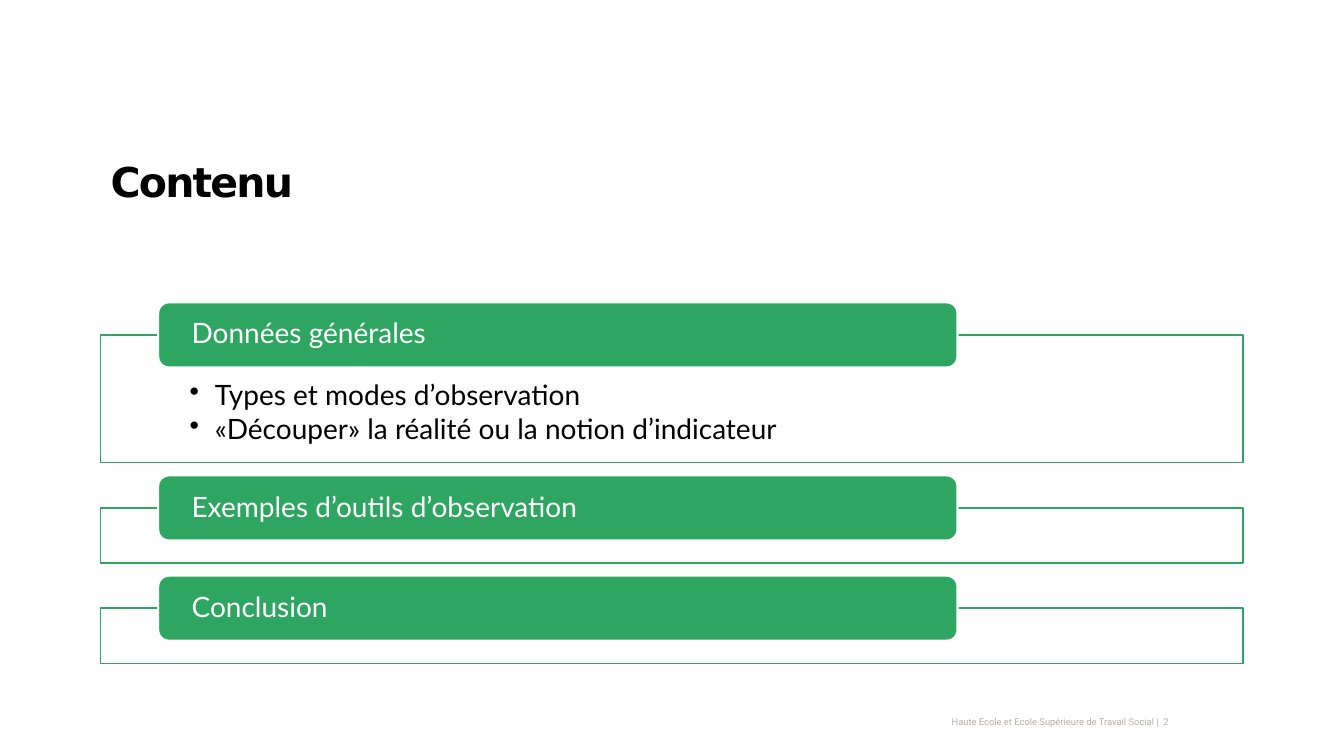
from lxml import etree
from pptx import Presentation
from pptx.dml.color import RGBColor
from pptx.enum.shapes import MSO_SHAPE
from pptx.enum.text import MSO_ANCHOR, PP_ALIGN
from pptx.oxml.ns import qn
from pptx.util import Pt

RECT, ROUND = MSO_SHAPE.RECTANGLE, MSO_SHAPE.ROUNDED_RECTANGLE
TOP, MIDDLE = MSO_ANCHOR.TOP, MSO_ANCHOR.MIDDLE
LEFT, RIGHT = PP_ALIGN.LEFT, PP_ALIGN.RIGHT

COLORS = {"green": "2EA662", "white": "FFFFFF", "black": "000000", "grey": "B5AEA7"}

# Text formats
TITLE = {"name": "DejaVu Sans", "size": Pt(29.3), "bold": True}
LABEL = {"name": "Lato", "size": Pt(20), "bold": False}
FOOT = {"name": "Roboto", "size": Pt(6.7), "bold": False}

# Section layout
SECTIONS = [
    ("Données générales", 91.4, ["Types et modes d’observation",
                                 "«Découper» la réalité ou la notion d’indicateur"]),
    ("Exemples d’outils d’observation", 39.4, []),
    ("Conclusion", 39.4, []),
]
START, LEAD, GAP = 216, 23.2, 9


def color(name):
    return RGBColor.from_string(COLORS[name])


def set_frame(shape, anchor, insets):
    frame = shape.text_frame
    left, top, right, bottom = map(Pt, insets)
    values = {"word_wrap": True, "vertical_anchor": anchor, "margin_left": left,
              "margin_top": top, "margin_right": right, "margin_bottom": bottom}
    for key, value in values.items():
        setattr(frame, key, value)
    return frame


def add_bullet(para):
    props = para._p.get_or_add_pPr()
    props.set("marL", str(Pt(18)))
    props.set("indent", str(-Pt(18)))
    etree.SubElement(props, qn("a:buChar")).set("char", "•")


def write(frame, lines, style, tint, align=LEFT, spacing=1.0, after=0, bullet=False):
    for i, line in enumerate(lines):
        para = frame.paragraphs[0] if i == 0 else frame.add_paragraph()
        para.alignment, para.line_spacing, para.space_after = align, spacing, Pt(after)
        if bullet:
            add_bullet(para)
        run = para.add_run()
        run.text = line
        for key, value in style.items():
            setattr(run.font, key, value)
        run.font.color.rgb = color(tint)


def add_text(slide, area, insets, anchor, line, style, tint, **layout):
    box = slide.shapes.add_textbox(*map(Pt, area))
    write(set_frame(box, anchor, insets), [line], style, tint, **layout)
    return box


def add_block(slide, kind, area, fill, line, width):
    shape = slide.shapes.add_shape(kind, *map(Pt, area))
    shape.shadow.inherit = False
    shape.fill.solid()
    shape.fill.fore_color.rgb = color(fill)
    shape.line.color.rgb = color(line)
    shape.line.width = Pt(width)
    return shape


def add_section(slide, top, height, head, items):
    # Outlined frame with its list
    body = add_block(slide, RECT, (72, top + LEAD, 816, height), "white", "green", 1)
    tone = body.fill._xPr.find(qn("a:solidFill"))[0]
    etree.SubElement(tone, qn("a:alpha")).set("val", "90000")
    if items:
        frame = set_frame(body, TOP, (63.4, 33, 63.4, 11.5))
        write(frame, items, LABEL, "black", spacing=0.9, after=3, bullet=True)
    # Heading bar across the frame's top edge
    bar = add_block(slide, ROUND, (113, top, 571, 46.5), "green", "white", 1.5)
    frame = set_frame(bar, MIDDLE, (21.6, 0, 21.6, 0))
    write(frame, [head], LABEL, "white", spacing=0.9)


def main():
    deck = Presentation()
    deck.slide_width, deck.slide_height = Pt(960), Pt(540)
    slide = deck.slides.add_slide(deck.slide_layouts[6])

    # Footer
    add_text(slide, (607.7, 511.2, 236.9, 10), (9.4, 5, 9.4, 5), MIDDLE,
             "Haute Ecole et Ecole Supérieure de Travail Social |  2",
             FOOT, "grey", align=RIGHT, spacing=Pt(7))

    # Title, with tight letters
    title = add_text(slide, (72, 108, 816, 90), (7.2, 3.6, 7.2, 3.6), TOP,
                     "Contenu", TITLE, "black")
    title.text_frame.paragraphs[0].runs[0].font._element.set("spc", "-130")

    # Sections, stacked with equal gaps
    top = START
    for head, height, items in SECTIONS:
        add_section(slide, top, height, head, items)
        top += LEAD + height + GAP

    deck.save("out.pptx")


if __name__ == "__main__":
    main()
